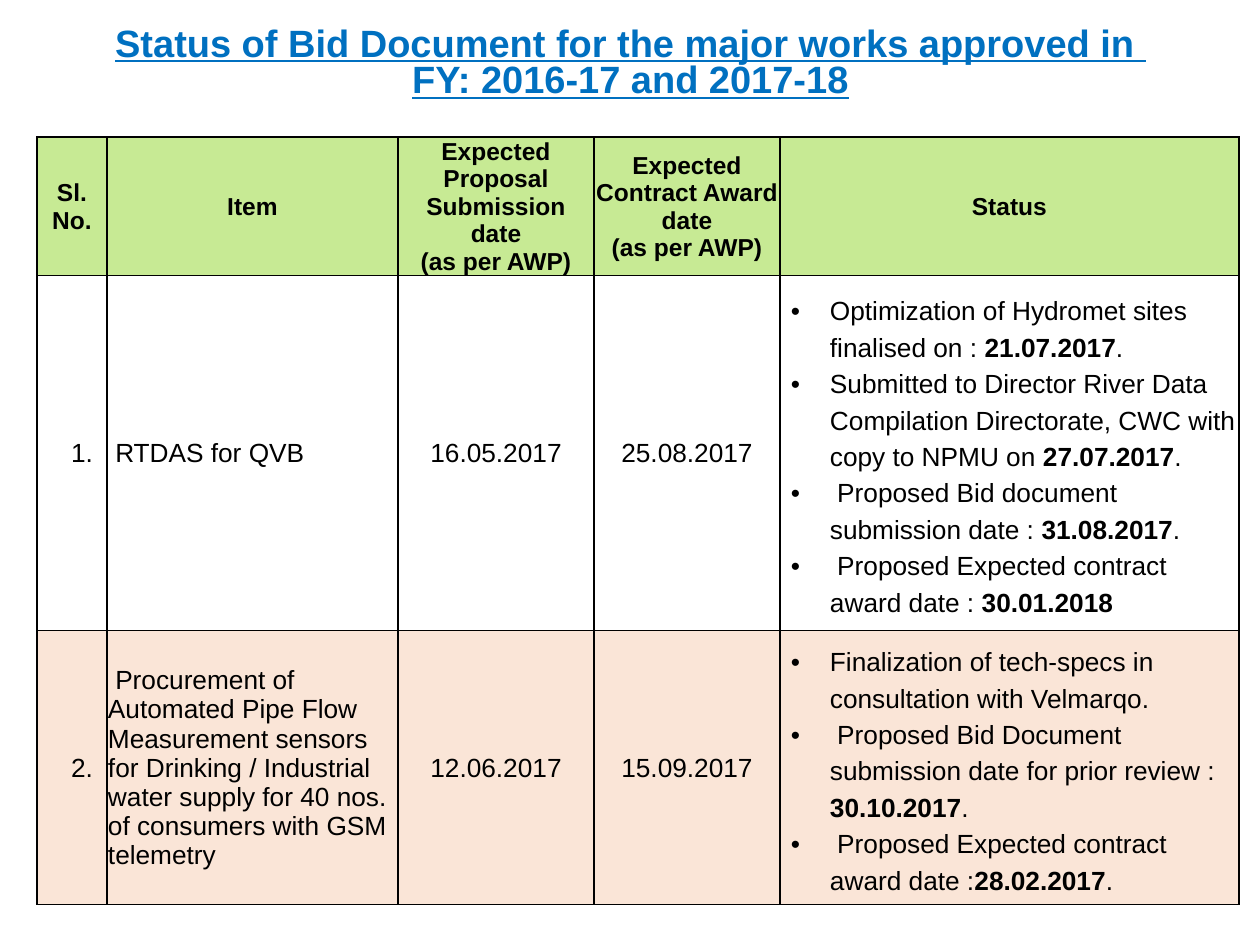
"""Build a slide with the status of bid documents as a table."""
from lxml.etree import SubElement
from pptx import Presentation
from pptx.dml.color import RGBColor
from pptx.enum.text import MSO_ANCHOR, MSO_AUTO_SIZE, PP_ALIGN
from pptx.oxml.ns import qn
from pptx.util import Pt

PX = 914400 // 126
COLORS = {"title": "0070C0", "text": "000000", "border": "000000",
          "header": "C7EA94", "first": "FFFFFF", "second": "FAE5D7"}
COLUMN_WIDTHS = [70, 291, 196, 186, 459]
ROW_HEIGHTS = [137, 355, 274]
ROW_FILLS = ["header", "first", "second"]
NUMBER, ITEM, STATUS = 0, 1, 4
ROWS = [
    ["Sl. No.", "Item",
     "Expected Proposal Submission date\n(as per AWP)",
     "Expected Contract Award date\n(as per AWP)", "Status"],
    ["1.", " RTDAS for QVB", "16.05.2017", "25.08.2017",
     "Optimization of Hydromet sites finalised on :** 21.07.2017**.\n"
     "Submitted to Director River Data Compilation Directorate, CWC with "
     "copy to NPMU on **27.07.2017**.\n"
     " Proposed Bid document submission date : **31.08.2017**.\n"
     " Proposed Expected contract award date : **30.01.2018**"],
    ["2.",
     " Procurement of Automated Pipe Flow Measurement sensors for Drinking / "
     "Industrial water supply for 40 nos. of consumers with GSM telemetry",
     "12.06.2017", "15.09.2017",
     "Finalization of tech-specs in consultation with Velmarqo.\n"
     " Proposed Bid Document submission date for prior review : **30.10.2017**.\n"
     " Proposed Expected contract award date :**28.02.2017**."],
]


def style_run(run, size, color, bold):
    run.font.name = "Arial"
    run.font.size = Pt(size)
    run.font.bold = bold
    run.font.color.rgb = RGBColor.from_string(COLORS[color])


def add_borders(cell):
    properties = cell._tc.get_or_add_tcPr()
    for side in ("lnL", "lnR", "lnT", "lnB"):
        line = SubElement(properties, qn(f"a:{side}"), w=str(Pt(1)))
        fill = SubElement(line, qn("a:solidFill"))
        SubElement(fill, qn("a:srgbClr"), val=COLORS["border"])


presentation = Presentation()
presentation.slide_width = 1260 * PX
presentation.slide_height = 945 * PX
slide = presentation.slides.add_slide(presentation.slide_layouts[5])

title = slide.shapes.title
title.left, title.top, title.width, title.height = (
    53 * PX, 21 * PX, 1155 * PX, 87 * PX)
title.text_frame.text = ("Status of Bid Document for the major works approved in \n"
                         "FY: 2016-17 and 2017-18")
title.text_frame.auto_size = MSO_AUTO_SIZE.NONE
title.text_frame.vertical_anchor = MSO_ANCHOR.MIDDLE
for paragraph in title.text_frame.paragraphs:
    paragraph.alignment = PP_ALIGN.CENTER
    paragraph.line_spacing = 0.8
    paragraph.space_before = Pt(0)
    style_run(paragraph.runs[0], 21.7, "title", True)
    paragraph.runs[0].font.underline = True

table = slide.shapes.add_table(
    len(ROWS), len(COLUMN_WIDTHS), 37 * PX, 137 * PX,
    sum(COLUMN_WIDTHS) * PX, sum(ROW_HEIGHTS) * PX).table
table.first_row = False
table.horz_banding = False
for column, width in zip(table.columns, COLUMN_WIDTHS):
    column.width = width * PX
for row, height in zip(table.rows, ROW_HEIGHTS):
    row.height = height * PX

for row_index, texts in enumerate(ROWS):
    is_header = row_index == 0
    for column_index, text in enumerate(texts):
        cell = table.cell(row_index, column_index)
        cell.margin_left = cell.margin_right = cell.margin_top = PX
        cell.margin_bottom = 0
        cell.vertical_anchor = MSO_ANCHOR.MIDDLE
        add_borders(cell)
        cell.fill.solid()
        cell.fill.fore_color.rgb = RGBColor.from_string(COLORS[ROW_FILLS[row_index]])
        for line_index, line in enumerate(text.split("\n")):
            if line_index == 0:
                paragraph = cell.text_frame.paragraphs[0]
            else:
                paragraph = cell.text_frame.add_paragraph()
            left_aligned = not is_header and column_index in (ITEM, STATUS)
            paragraph.alignment = PP_ALIGN.LEFT if left_aligned else PP_ALIGN.CENTER
            properties = paragraph._p.get_or_add_pPr()
            if not is_header and column_index == NUMBER:
                properties.set("marL", str(20 * PX))
            if not is_header and column_index == STATUS:
                paragraph.line_spacing = 1.25
                properties.set("marL", str(49 * PX))
                properties.set("indent", str(-39 * PX))
                SubElement(properties, qn("a:buFont"), typeface="Arial")
                SubElement(properties, qn("a:buChar"), char="•")
            for part_index, part in enumerate(line.split("**")):
                if part:
                    run = paragraph.add_run()
                    run.text = part
                    style_run(run, 14 if is_header else 15, "text",
                              is_header or part_index % 2 == 1)

presentation.save("out.pptx")
